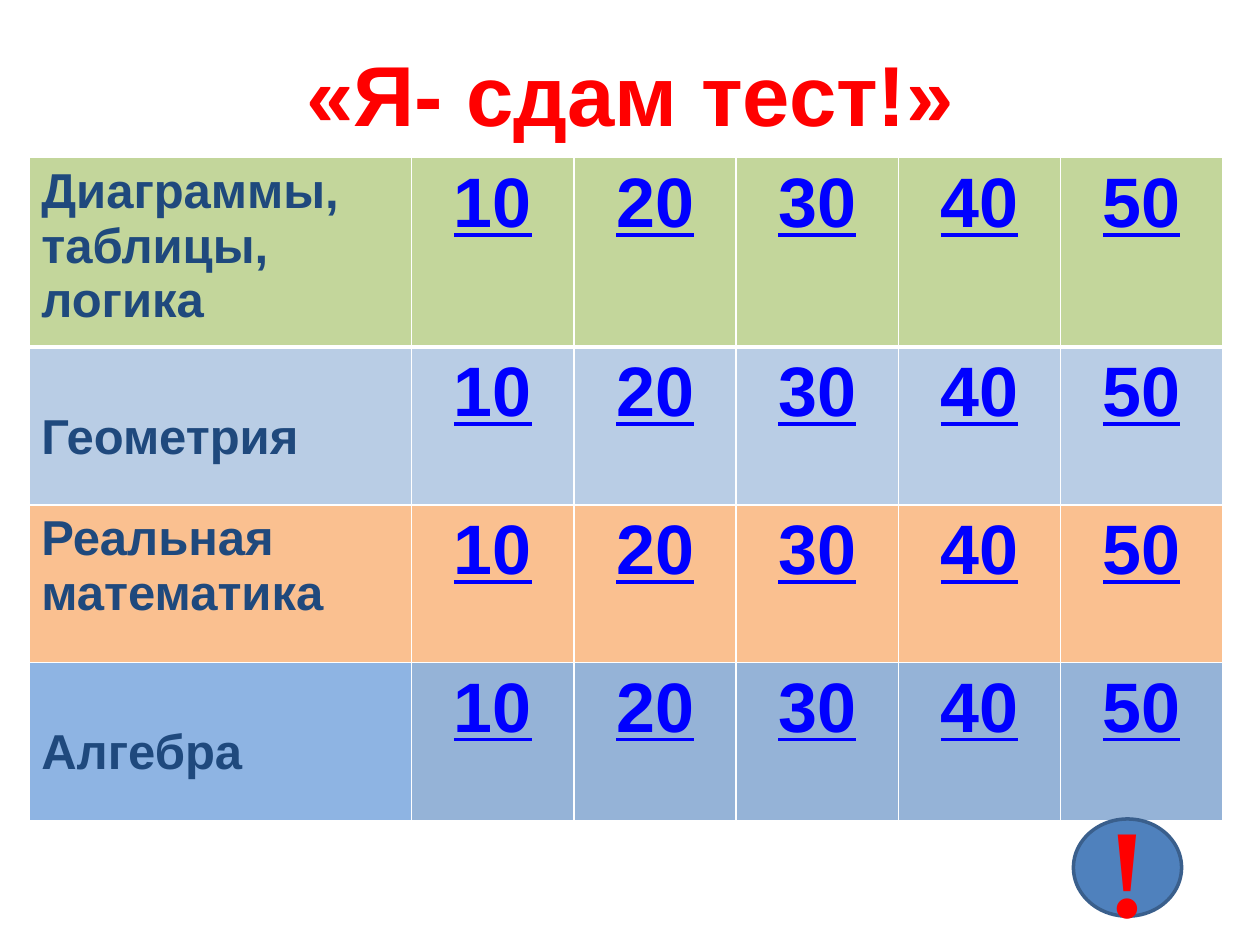
import pptx
import pptx.dml.color
import pptx.enum.shapes
import pptx.enum.text
import pptx.oxml.ns
import pptx.util
from lxml import etree

Cm = pptx.util.Cm
Pt = pptx.util.Pt
ALIGN = pptx.enum.text.PP_ALIGN
ANCHOR = pptx.enum.text.MSO_ANCHOR

COLOURS = {
    "red": "FF0000",
    "navy": "1F497D",
    "link": "0000FF",
    "white": "FFFFFF",
    "green": "C3D69B",
    "pale blue": "B9CDE5",
    "orange": "FAC090",
    "sky": "8EB4E3",
    "steel": "95B3D7",
    "badge": "4F81BD",
    "badge edge": "3A5F8C",
}

TITLE = {"name": "Arial", "size": Pt(48.6), "bold": True}
TOPIC = {"name": "Arial", "size": Pt(28), "bold": True}
SCORE = {"name": "Arial", "size": Pt(40), "bold": True, "underline": True}
MARK = {"name": "Times New Roman", "size": Pt(72), "bold": True}

SCORES = ["10", "20", "30", "40", "50"]
TOPICS = [
    ("Диаграммы, таблицы, логика", "green", "green", 0.13),
    ("Геометрия", "pale blue", "pale blue", 1.27),
    ("Реальная математика", "orange", "orange", 0.13),
    ("Алгебра", "sky", "steel", 1.27),
]


def colour(name):
    return pptx.dml.color.RGBColor.from_string(COLOURS[name])


def write(frame, text, style, colour_name, align):
    frame.word_wrap = True
    paragraph = frame.paragraphs[0]
    paragraph.alignment = align
    span = paragraph.add_run()
    span.text = text
    for key, value in style.items():
        setattr(span.font, key, value)
    span.font.color.rgb = colour(colour_name)


def paint(target, name):
    target.fill.solid()
    target.fill.fore_color.rgb = colour(name)


def add_borders(cell, widths):
    properties = cell._tc.get_or_add_tcPr()
    for position, (side, width) in enumerate(widths.items()):
        line = etree.Element(pptx.oxml.ns.qn(f"a:{side}"), w=str(Pt(width)))
        fill = etree.SubElement(line, pptx.oxml.ns.qn("a:solidFill"))
        etree.SubElement(fill, pptx.oxml.ns.qn("a:srgbClr"), val=COLOURS["white"])
        properties.insert(position, line)


def add_title(page, text):
    box = page.shapes.add_textbox(Cm(1.27), Cm(0.76), Cm(22.86), Cm(2.21))
    box.text_frame.vertical_anchor = ANCHOR.MIDDLE
    write(box.text_frame, text, TITLE, "red", ALIGN.CENTER)


def add_score_board(page):
    widths = [7.72] + [3.27] * len(SCORES)
    row_height = 3.18
    table = page.shapes.add_table(
        len(TOPICS), len(widths), Cm(0.58), Cm(3.18),
        Cm(sum(widths)), Cm(row_height * len(TOPICS)),
    ).table
    for column, width in zip(table.columns, widths):
        column.width = Cm(width)
    for row, (topic, topic_fill, score_fill, top) in enumerate(TOPICS):
        table.rows[row].height = Cm(row_height)
        topic_cell, *score_cells = table.rows[row].cells
        topic_cell.margin_top = Cm(top)
        paint(topic_cell, topic_fill)
        write(topic_cell.text_frame, topic, TOPIC, "navy", ALIGN.LEFT)
        for cell, score in zip(score_cells, SCORES):
            paint(cell, score_fill)
            write(cell.text_frame, score, SCORE, "link", ALIGN.CENTER)
        borders = {
            "lnL": 1,
            "lnR": 1,
            "lnT": 3 if row == 1 else 1,
            "lnB": 3 if row == 0 else 1,
        }
        for cell in table.rows[row].cells:
            add_borders(cell, borders)


def add_badge(page, text):
    badge = page.shapes.add_shape(
        pptx.enum.shapes.MSO_SHAPE.OVAL, Cm(21.64), Cm(16.51), Cm(2.18), Cm(1.96)
    )
    badge.shadow.inherit = False
    paint(badge, "badge")
    badge.line.color.rgb = colour("badge edge")
    badge.line.width = Pt(2)
    badge.text_frame.vertical_anchor = ANCHOR.MIDDLE
    write(badge.text_frame, text, MARK, "red", ALIGN.CENTER)


def main():
    deck = pptx.Presentation()
    deck.slide_width = Cm(25.4)
    deck.slide_height = Cm(19.05)
    page = deck.slides.add_slide(deck.slide_layouts[6])
    add_title(page, "«Я- сдам тест!»")
    add_score_board(page)
    add_badge(page, "!")
    deck.save("out.pptx")


if __name__ == "__main__":
    main()
